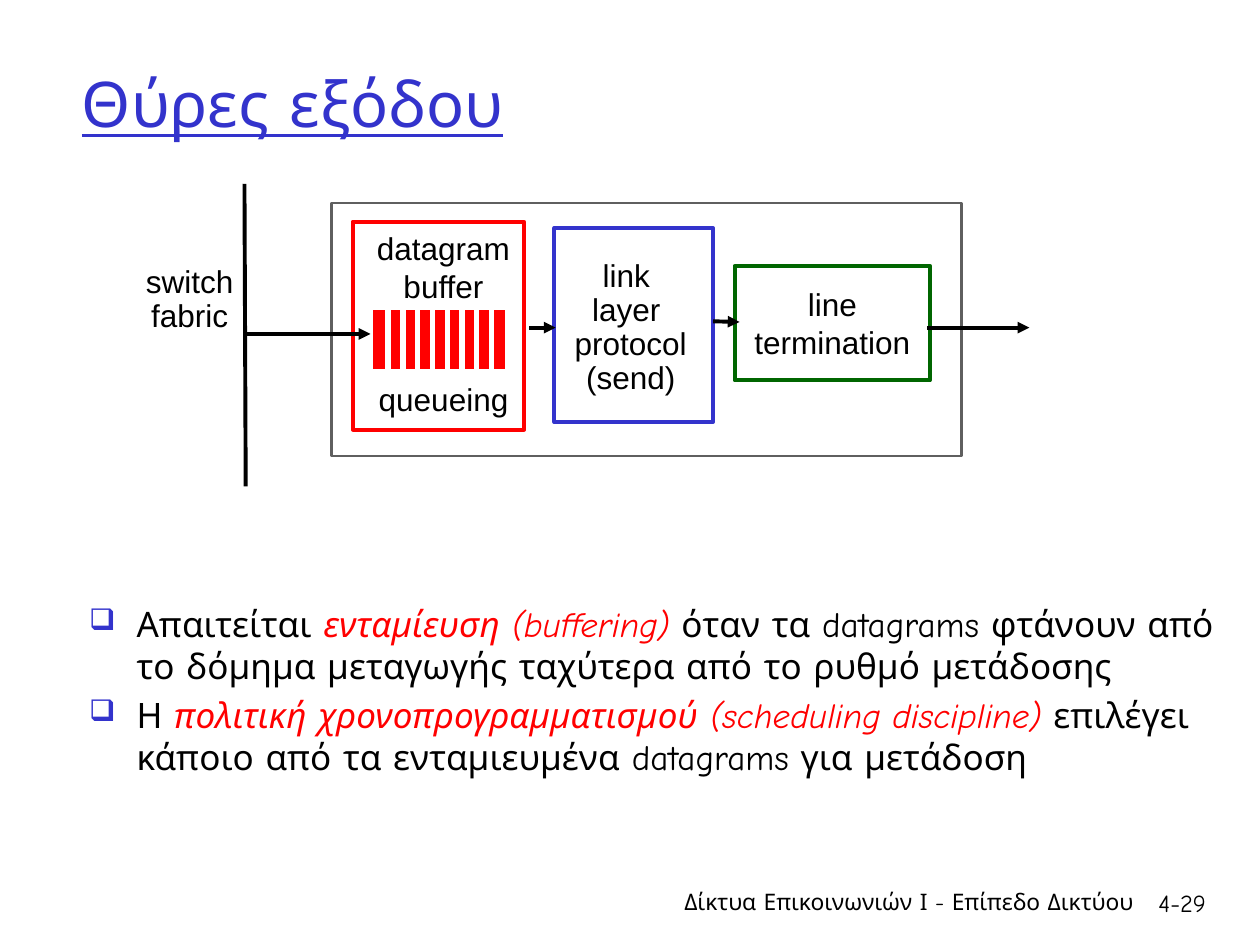
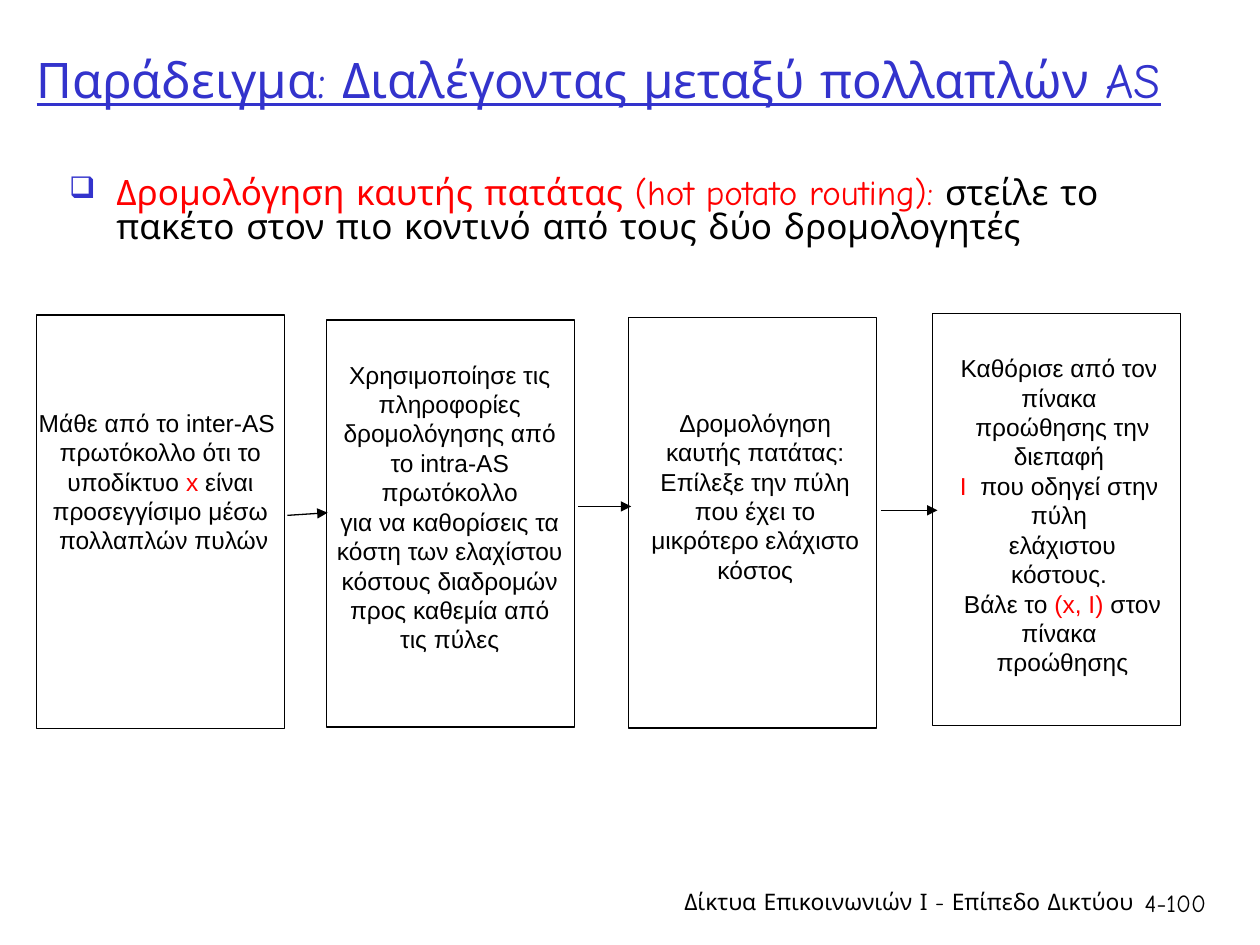
from lxml import etree
from pptx import Presentation
from pptx.dml.color import RGBColor
from pptx.enum.shapes import MSO_CONNECTOR, MSO_SHAPE
from pptx.enum.text import MSO_ANCHOR, MSO_AUTO_SIZE, PP_ALIGN
from pptx.oxml.ns import qn
from pptx.util import Pt

LEFT, CENTER, RIGHT = PP_ALIGN.LEFT, PP_ALIGN.CENTER, PP_ALIGN.RIGHT
TOP, MIDDLE = MSO_ANCHOR.TOP, MSO_ANCHOR.MIDDLE
NO_AUTOFIT = MSO_AUTO_SIZE.NONE
RECT = MSO_SHAPE.RECTANGLE
STRAIGHT = MSO_CONNECTOR.STRAIGHT

BLACK = RGBColor(0x00, 0x00, 0x00)
WHITE = RGBColor(0xFF, 0xFF, 0xFF)
BLUE = RGBColor(0x33, 0x33, 0xCC)
RED = RGBColor(0xFF, 0x00, 0x00)
GREEN = RGBColor(0x00, 0x66, 0x00)
GRAY = RGBColor(0x5F, 0x5F, 0x5F)

HEAD_FONT = "Comic Neue"
BOX_FONT = "Arial"
FOOTER = "Δίκτυα Επικοινωνιών Ι - Επίπεδο Δικτύου"


def write(sp, paragraphs, size=18, font=BOX_FONT, color=BLACK, align=CENTER,
          anchor=TOP, spacing=None, before=(), wrap=True, underline=None, bullet=False):
    tf = sp.text_frame
    tf.auto_size = NO_AUTOFIT
    tf.word_wrap = wrap
    tf.vertical_anchor = anchor
    for i, runs in enumerate(paragraphs):
        p = tf.paragraphs[0] if i == 0 else tf.add_paragraph()
        p.alignment = align
        if spacing:
            p.line_spacing = spacing
        if i < len(before):
            p.space_before = Pt(before[i])
        if bullet:
            pPr = p._p.get_or_add_pPr()
            pPr.set("marL", str(Pt(27)))
            pPr.set("indent", str(-Pt(27)))
            clr = etree.SubElement(pPr, qn("a:buClr"))
            etree.SubElement(clr, qn("a:srgbClr"), val=str(BLUE))
            etree.SubElement(pPr, qn("a:buSzPct"), val="85000")
            etree.SubElement(pPr, qn("a:buChar"), char="❑")
        for run in [(runs,)] if isinstance(runs, str) else runs:
            r = p.add_run()
            r.text = run[0]
            r.font.name = font
            r.font.size = Pt(size)
            r.font.color.rgb = run[1] if len(run) > 1 else color
            r.font.italic = len(run) > 2 and run[2]
            r.font.underline = underline


def connect(s, x1, y1, x2, y2, color=BLACK, width=2.25, arrow=True):
    c = s.shapes.add_connector(STRAIGHT, Pt(x1), Pt(y1), Pt(x2), Pt(y2))
    c.line.color.rgb = color
    c.line.width = Pt(width)
    if arrow:
        etree.SubElement(c.line._get_or_add_ln(), qn("a:tailEnd"), type="triangle")
    etree.SubElement(c._element.spPr, qn("a:effectLst"))


prs = Presentation()
prs.slide_width, prs.slide_height = Pt(720), Pt(540)

pages = [
    ("4-29", "Θύρες εξόδου", 36, (39.6, 31.7, 612, 54), (43.9, 340.6, 661.7, 72), None, [
        [("Απαιτείται ",), ("ενταμίευση (buffering) ", RED, True),
         ("όταν τα datagrams φτάνουν από το δόμημα μεταγωγής ταχύτερα από το ρυθμό μετάδοσης",)],
        [("Η",), (" πολιτική χρονοπρογραμματισμού (scheduling discipline) ", RED, True),
         ("επιλέγει κάποιο από τα ενταμιευμένα datagrams για μετάδοση",)],
    ]),
    ("4-100", "Παράδειγμα: Διαλέγοντας μεταξύ πολλαπλών AS", 28,
     (13.7, 0, 690.5, 90), (32.4, 98.6, 629.3, 74.9), 0.8, [
         [("Δρομολόγηση καυτής πατάτας (hot potato routing): ", RED),
          ("στείλε το πακέτο στον πιο κοντινό από τους δύο δρομολογητές",)],
     ]),
]
for number, title, size, title_at, body_at, spacing, points in pages:
    s = prs.slides.add_slide(prs.slide_layouts[5])
    sp = s.shapes.title
    sp.left, sp.top, sp.width, sp.height = map(Pt, title_at)
    write(sp, [title], size=size, font=HEAD_FONT, color=BLUE, align=LEFT,
          anchor=MIDDLE, underline=True)
    sp = s.shapes.add_textbox(*map(Pt, body_at))
    write(sp, points, size=20, font=HEAD_FONT, align=LEFT, spacing=spacing,
          before=[4] * len(points), bullet=True)
    for text, size, left, width in [(FOOTER, 13, 380.2, 274.3), (number, 14, 643, 53.3)]:
        sp = s.shapes.add_textbox(Pt(left), Pt(504), Pt(width), Pt(36))
        write(sp, [text], size=size, font=HEAD_FONT, align=RIGHT)

ports, potato = prs.slides

port_boxes = [
    (189.4, 115.9, 360, 144.7, WHITE, GRAY, 1.5, [], None),
    (419.8, 151.9, 111.6, 65.5, WHITE, GREEN, 2.25, ["line", "termination"], None),
    (316.8, 130.3, 90.7, 110.9, WHITE, BLUE, 2.25, [], None),
    (319, 154.8, 82.8, 65.5, WHITE, None, 0, ["link ", "layer ", "protocol", "(send)"], 0.9),
    (67, 139, 82.8, 65.5, WHITE, None, 0, ["switch", "fabric"], 0.9),
    (201.6, 126.7, 97.9, 118.8, WHITE, RED, 2.25, [], None),
    (211.7, 175.7, 78.5, 36.7, RED, WHITE, 3, [], None),
]
for left, top, width, height, fill, color, weight, text, spacing in port_boxes:
    sp = ports.shapes.add_shape(RECT, Pt(left), Pt(top), Pt(width), Pt(height))
    sp.shadow.inherit = False
    sp.fill.solid()
    sp.fill.fore_color.rgb = fill
    if color is None:
        sp.line.fill.background()
    else:
        sp.line.color.rgb = color
        sp.line.width = Pt(weight)
    write(sp, text, anchor=MIDDLE, spacing=spacing, wrap=False)

sp = ports.shapes.add_textbox(Pt(208.1), Pt(127.4), Pt(90.7), Pt(115.2))
write(sp, ["datagram", "buffer", "queueing"], before=(0, 0, 43), wrap=False)

for i in range(8):
    x = 221.8 + 8.45 * i
    connect(ports, x, 176.4, x, 211.7, color=WHITE, width=3, arrow=False)

connect(ports, 139.7, 105.1, 140.4, 277.9, arrow=False)
for x1, y1, x2, y2 in [(139, 190.8, 211.7, 190.8), (302.4, 187.2, 317.5, 187.2),
                       (407.5, 183.6, 422.6, 184), (529.9, 187.2, 588.2, 187.2)]:
    connect(ports, x1, y1, x2, y2)

steps = [
    ((20.9, 180, 236.2), (14.4, 229.5, 158.4), [
        "Μάθε από το inter-AS  ", "πρωτόκολλο ότι το ",
        [("υποδίκτυο ",), ("x ", RED), ("είναι ",)],
        "προσεγγίσιμο μέσω ", "πολλαπλών πυλών"]),
    ((186.5, 182.9, 232.6), (184.3, 202, 145.4), [
        "Χρησιμοποίησε τις πληροφορίες δρομολόγησης από το intra-AS πρωτόκολλο",
        "για να καθορίσεις τα κόστη των ελαχίστου κόστους διαδρομών προς καθεμία από τις πύλες"]),
    ((359.3, 181.4, 234.7), (360.7, 229.5, 141.8), [
        "Δρομολόγηση καυτής πατάτας: Επίλεξε την πύλη που έχει το μικρότερο ελάχιστο κόστος"]),
    ((532.8, 179.3, 235.4), (536.4, 198.3, 137.5), [
        "Καθόρισε από τον πίνακα", " προώθησης την διεπαφή",
        [("I  ", RED), ("που οδηγεί στην πύλη",)], " ελάχιστου κόστους.",
        [(" Βάλε το ",), ("(x, I) ", RED), ("στον πίνακα",)], " προώθησης"]),
]
for (left, top, height), (text_left, text_top, text_width), text in steps:
    sp = potato.shapes.add_shape(RECT, Pt(left), Pt(top), Pt(141.8), Pt(height))
    sp.shadow.inherit = False
    sp.fill.background()
    sp.line.color.rgb = BLACK
    sp.line.width = Pt(0.75)
    sp = potato.shapes.add_textbox(Pt(text_left), Pt(text_top), Pt(text_width),
                                   Pt(top + height - text_top))
    write(sp, text, size=14)

for x1, y1, x2, y2 in [(164.2, 294.5, 187.2, 293), (330.5, 289.4, 360.7, 289.4),
                       (503.3, 291.6, 535.7, 291.6)]:
    connect(potato, x1, y1, x2, y2, width=0.75)

prs.save("out.pptx")
